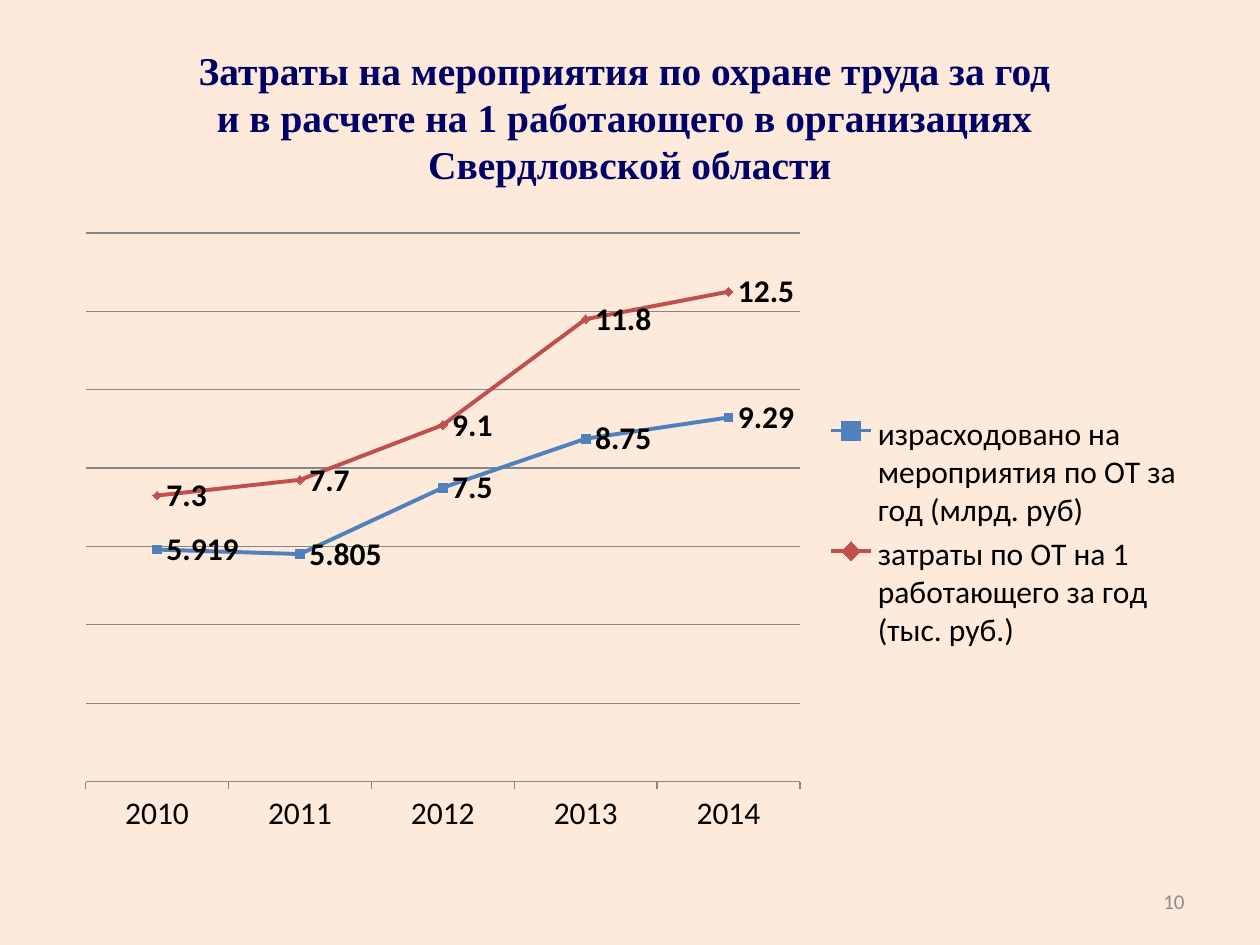
import pptx
import pptx.chart.data
import pptx.dml.color
import pptx.enum.chart
import pptx.enum.text
import pptx.oxml
import pptx.oxml.ns
import pptx.util

Pt = pptx.util.Pt
RGBColor = pptx.dml.color.RGBColor

CREAM = RGBColor(0xFD, 0xEA, 0xDA)
NAVY = RGBColor(0x00, 0x00, 0x66)
BLACK = RGBColor(0x00, 0x00, 0x00)
GREY = RGBColor(0x8C, 0x8C, 0x8C)
AXIS_GREY = RGBColor(0x86, 0x86, 0x86)
BLUE = RGBColor(0x4F, 0x81, 0xBD)
RED = RGBColor(0xC0, 0x50, 0x4D)

TITLE = (
    "Затраты на мероприятия по охране труда за год \v"
    "и в расчете на 1 работающего в организациях \v"
    "Свердловской области"
)
YEARS = ["2010", "2011", "2012", "2013", "2014"]
MARKERS = pptx.enum.chart.XL_MARKER_STYLE
COSTS = [
    ("израсходовано на мероприятия по ОТ за год (млрд. руб)",
     (5.919, 5.805, 7.5, 8.75, 9.29), BLUE, MARKERS.SQUARE),
    ("затраты по ОТ на 1 работающего за год (тыс. руб.)",
     (7.3, 7.7, 9.1, 11.8, 12.5), RED, MARKERS.DIAMOND),
]


def set_font(font, name, size, color, bold=False):
    font.name = name
    font.size = Pt(size)
    font.bold = bold
    font.color.rgb = color


def add_text(slide, box, text, align, **font):
    frame = slide.shapes.add_textbox(*map(Pt, box)).text_frame
    frame.word_wrap = True
    frame.vertical_anchor = pptx.enum.text.MSO_ANCHOR.MIDDLE
    paragraph = frame.paragraphs[0]
    paragraph.text = text
    paragraph.alignment = align
    set_font(paragraph.font, **font)


def set_plot_layout(chart, x, y, w, h):
    """Fix the inner plot area, as fractions of the chart."""
    plot_area = chart._chartSpace.chart.plotArea
    for old in plot_area.findall(pptx.oxml.ns.qn("c:layout")):
        plot_area.remove(old)
    places = "".join(
        f'<c:{tag} val="{value}"/>'
        for tag, value in (("x", x), ("y", y), ("w", w), ("h", h))
    )
    plot_area.insert(0, pptx.oxml.parse_xml(
        f'<c:layout {pptx.oxml.ns.nsdecls("c")}><c:manualLayout>'
        '<c:layoutTarget val="inner"/><c:xMode val="edge"/><c:yMode val="edge"/>'
        f'{places}</c:manualLayout></c:layout>'
    ))


def style_axes(chart):
    years = chart.category_axis
    years.major_tick_mark = pptx.enum.chart.XL_TICK_MARK.OUTSIDE
    years.format.line.color.rgb = AXIS_GREY
    years.format.line.width = Pt(0.75)
    amounts = chart.value_axis
    amounts.visible = False
    amounts.minimum_scale, amounts.maximum_scale = 0, 14
    amounts.major_unit = 2
    amounts.has_major_gridlines = True
    amounts.major_gridlines.format.line.color.rgb = AXIS_GREY
    amounts.major_gridlines.format.line.width = Pt(0.75)


def style_series(series, color, marker):
    series.smooth = False
    series.format.line.color.rgb = color
    series.format.line.width = Pt(2.25)
    series.marker.style = marker
    series.marker.size = 5
    series.marker.format.fill.solid()
    series.marker.format.fill.fore_color.rgb = color
    series.marker.format.line.color.rgb = color
    labels = series.data_labels
    labels.show_value = True
    labels.position = pptx.enum.chart.XL_LABEL_POSITION.RIGHT
    set_font(labels.font, "Calibri", 18, BLACK, bold=True)


def add_cost_chart(slide, box):
    data = pptx.chart.data.CategoryChartData()
    data.categories = YEARS
    for name, values, _, _ in COSTS:
        data.add_series(name, values)
    chart = slide.shapes.add_chart(
        pptx.enum.chart.XL_CHART_TYPE.LINE_MARKERS, *map(Pt, box), data
    ).chart
    set_font(chart.font, "Calibri", 18, BLACK)
    chart.has_title = False
    chart.has_legend = True
    chart.legend.position = pptx.enum.chart.XL_LEGEND_POSITION.RIGHT
    chart.legend.include_in_layout = False
    chart.plots[0].vary_by_categories = False
    style_axes(chart)
    for series, (_, _, color, marker) in zip(chart.plots[0].series, COSTS):
        style_series(series, color, marker)
    set_plot_layout(chart, x=0.02, y=0.02, w=0.63, h=0.88)


def main():
    presentation = pptx.Presentation()
    presentation.slide_width, presentation.slide_height = Pt(720), Pt(540)
    slide = presentation.slides.add_slide(presentation.slide_layouts[6])
    slide.background.fill.solid()
    slide.background.fill.fore_color.rgb = CREAM

    align = pptx.enum.text.PP_ALIGN
    add_text(slide, (36, 21.6, 648, 90), TITLE, align.CENTER,
             name="Times New Roman", size=22.5, color=NAVY, bold=True)
    add_cost_chart(slide, (36, 126, 648, 356.4))
    add_text(slide, (516, 500.5, 168, 28.75), "10", align.RIGHT,
             name="Calibri", size=12, color=GREY)
    presentation.save("out.pptx")


if __name__ == "__main__":
    main()
